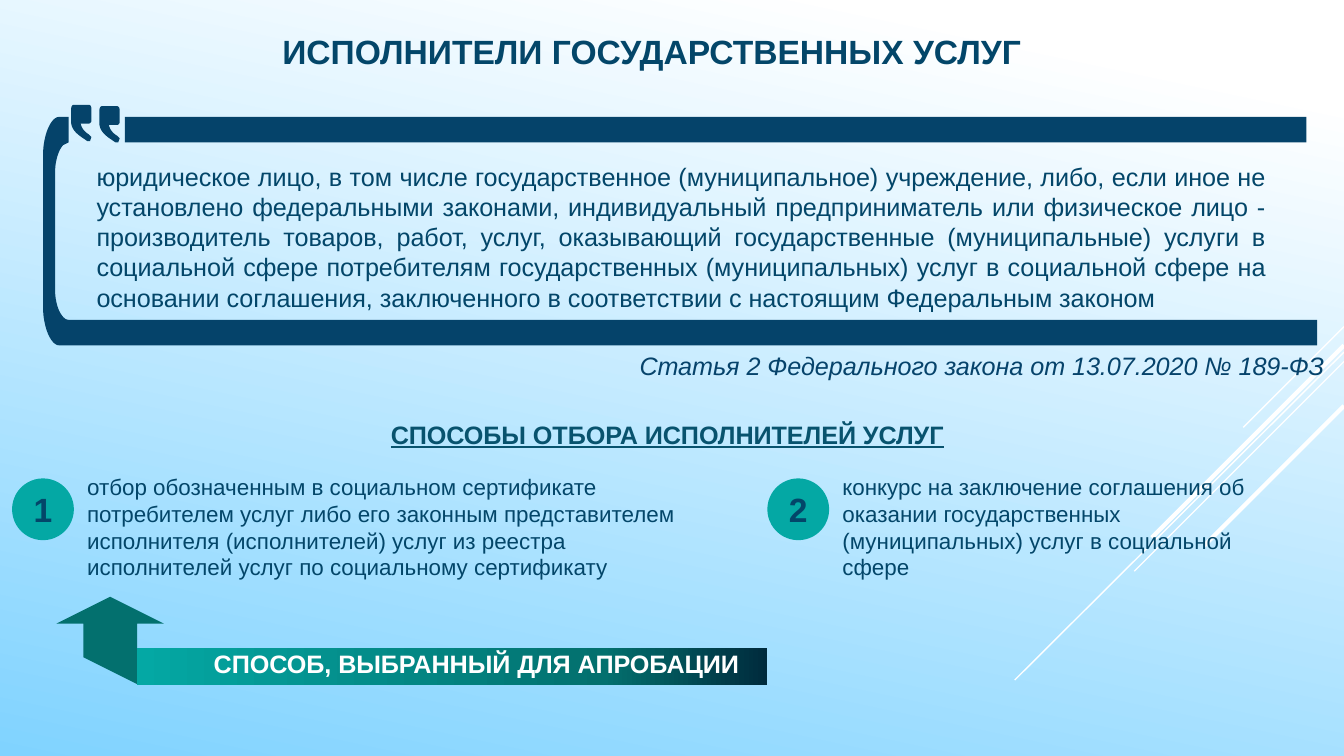
from copy import deepcopy

from lxml import etree
from pptx import Presentation
from pptx import util as u
from pptx.dml.color import RGBColor
from pptx.enum import shapes, text
from pptx.oxml import ns

NAVY, BAND, TEAL, DEEP, WHITE = "034669", "05436A", "04A8A4", "03706E", "FFFFFF"
MID = text.MSO_ANCHOR.MIDDLE
LEFT, CENTER, JUST = text.PP_ALIGN.LEFT, text.PP_ALIGN.CENTER, text.PP_ALIGN.JUSTIFY


def tint(code):
    return RGBColor.from_string(code)


def write(frame, words, size=13.5, color=NAVY, bold=False, slant=False,
          under=False, align=LEFT, anchor=text.MSO_ANCHOR.TOP, pad=(0.1, 0.05, 0.1, 0.05)):
    frame.word_wrap = True
    frame.vertical_anchor = anchor
    (frame.margin_left, frame.margin_top,
     frame.margin_right, frame.margin_bottom) = map(u.Inches, pad)
    line = frame.paragraphs[0]
    line.alignment = align
    run = line.add_run()
    run.text = words
    font = run.font
    font.name, font.size = "Arial", u.Pt(size)
    font.bold, font.italic, font.underline = bold, slant, under
    font.color.rgb = tint(color)


def blend(fill, stops, angle):
    fill.gradient()
    fill.gradient_angle = angle
    first = fill.gradient_stops[0]._gs
    for _ in stops[2:]:
        first.addnext(deepcopy(first))
    for stop, (place, code) in zip(fill.gradient_stops, stops):
        stop.position = place
        stop.color.rgb = tint(code)


def trace(start, steps, parts=12):
    points = [start]
    for step in steps:
        if len(step) == 2:
            points.append(step)
            continue
        ends = [points[-1], step[:2], step[2:4], step[4:]]
        for n in range(1, parts + 1):
            t = n / parts
            mix = ((1 - t) ** 3, 3 * t * (1 - t) ** 2, 3 * t * t * (1 - t), t ** 3)
            points.append(tuple(sum(m * p[i] for m, p in zip(mix, ends)) for i in (0, 1)))
    return points


class Pen:
    def __init__(self, slide):
        self.slide = slide
        self.shapes = slide.shapes

    def label(self, box, words, **style):
        write(self.shapes.add_textbox(*map(u.Inches, box)).text_frame, words, **style)

    def plain(self, shape, color=None):
        shape.shadow.inherit = False
        shape.line.fill.background()
        if color:
            shape.fill.solid()
            shape.fill.fore_color.rgb = tint(color)
        return shape

    def block(self, kind, box, color=None):
        return self.plain(self.shapes.add_shape(kind, *map(u.Inches, box)), color)

    def outline(self, loops, color):
        loops = [[(u.Inches(x), u.Inches(y)) for x, y in loop] for loop in loops]
        form = self.shapes.build_freeform(*loops[0][0], scale=1.0)
        for n, loop in enumerate(loops):
            if n:
                form.move_to(*loop[0])
            form.add_line_segments(loop[1:], close=True)
        return self.plain(form.convert_to_shape(), color)

    def ray(self, start, end, width):
        line = self.shapes.add_connector(
            shapes.MSO_CONNECTOR.STRAIGHT, *map(u.Inches, start + end))
        line.line.color.rgb = tint(WHITE)
        line.line.width = u.Pt(width)
        etree.SubElement(line._element.spPr, ns.qn("a:effectLst"))

    def method(self, left, width, number, words):
        disc = self.block(shapes.MSO_SHAPE.OVAL, (left, 3.56, 0.46, 0.46), TEAL)
        write(disc.text_frame, number, size=18, bold=True, align=CENTER,
              anchor=MID, pad=(0, 0, 0, 0))
        self.label((left + 0.46, 3.47, width, 0.91), words, size=12)


def main():
    deck = Presentation()
    deck.slide_width = u.Inches(10)
    deck.slide_height = deck.slide_width * 9 // 16
    pen = Pen(deck.slides.add_slide(deck.slide_layouts[6]))
    blend(pen.slide.background.fill, [(0.1, WHITE), (1, "80D3FF")], 258)

    for top, left, low, width in [(2.43, 9.25, 3.18, 0.75), (2.62, 7.55, 5.06, 0.75),
                                  (2.69, 8.44, 4.25, 0.75), (2.57, 8.57, 4, 2.25),
                                  (3.02, 8.96, 4.06, 2.25)]:
        pen.ray((10, top), (left, low), width)

    pen.label((0.26, 0.18, 9.18, 0.4), "ИСПОЛНИТЕЛИ ГОСУДАРСТВЕННЫХ УСЛУГ",
              size=18, bold=True, align=CENTER)
    pen.label((0.62, 1.15, 8.9, 1.24),
              "юридическое лицо, в том числе государственное (муниципальное) учреждение, "
              "либо, если иное не установлено федеральными законами, индивидуальный "
              "предприниматель или физическое лицо - производитель товаров, работ, услуг, "
              "оказывающий государственные (муниципальные) услуги в социальной сфере "
              "потребителям государственных (муниципальных) услуг в социальной сфере на "
              "основании соглашения, заключенного в соответствии с настоящим Федеральным "
              "законом", align=JUST)

    bar = [(0.93, 0.87), (9.72, 0.87), (9.72, 1.06), (0.93, 1.06)]
    hook = trace((0.44, 0.87), [
        (0.51, 0.87), (0.51, 1.06), (0.47, 1.08), (0.44, 1.11, 0.41, 1.19, 0.41, 1.28),
        (0.41, 2.16), (0.41, 2.28, 0.46, 2.38, 0.51, 2.38), (9.8, 2.38), (9.8, 2.57),
        (0.44, 2.57), (0.38, 2.57, 0.32, 2.44, 0.32, 2.28), (0.32, 1.16),
        (0.32, 1, 0.38, 0.87, 0.44, 0.87)])
    pen.outline([bar, hook], BAND)

    quote = trace((0.02, 0), [
        (0.13, 0), (0.14, 0, 0.15, 0.01, 0.15, 0.03), (0.15, 0.12),
        (0.15, 0.13, 0.14, 0.14, 0.13, 0.14), (0.07, 0.14),
        (0.08, 0.18, 0.1, 0.2, 0.13, 0.22), (0.15, 0.24), (0.14, 0.27), (0.12, 0.27),
        (0.06, 0.23, 0.01, 0.2, 0, 0.14), (0, 0.03), (0, 0.01, 0.01, 0, 0.02, 0)])
    for left, top in [(0.74, 0.79), (0.53, 0.78)]:
        pen.outline([[(left + x, top + y) for x, y in quote]], BAND)

    pen.label((4.66, 2.56, 5.58, 0.33),
              "Статья 2 Федерального закона от 13.07.2020 № 189-ФЗ",
              color="06436B", slant=True)
    pen.label((2.81, 3.07, 7.46, 0.33), "СПОСОБЫ ОТБОРА ИСПОЛНИТЕЛЕЙ УСЛУГ",
              color="08536E", bold=True, under=True, align=JUST)

    pen.method(0.09, 4.76, "1",
               "отбор обозначенным в социальном сертификате потребителем услуг либо его "
               "законным представителем исполнителя (исполнителей) услуг из реестра "
               "исполнителей услуг по социальному сертификату")
    pen.method(5.71, 3.23, "2",
               "конкурс на заключение соглашения об оказании государственных "
               "(муниципальных) услуг в социальной сфере")

    pen.outline([[(0.82, 4.44), (1.22, 4.64), (1.02, 4.64), (1.02, 5.09),
                  (0.62, 4.89), (0.62, 4.64), (0.42, 4.64)]], DEEP)
    strip = pen.block(shapes.MSO_SHAPE.RECTANGLE, (1.02, 4.82, 4.69, 0.28))
    blend(strip.fill, [(0, TEAL), (0.74, DEEP), (1, "002B3D")], 0)
    write(strip.text_frame, "СПОСОБ, ВЫБРАННЫЙ ДЛЯ АПРОБАЦИИ", color=WHITE,
          bold=True, anchor=MID, pad=(0.57, 0, 0, 0.04))
    deck.save("out.pptx")


if __name__ == "__main__":
    main()
